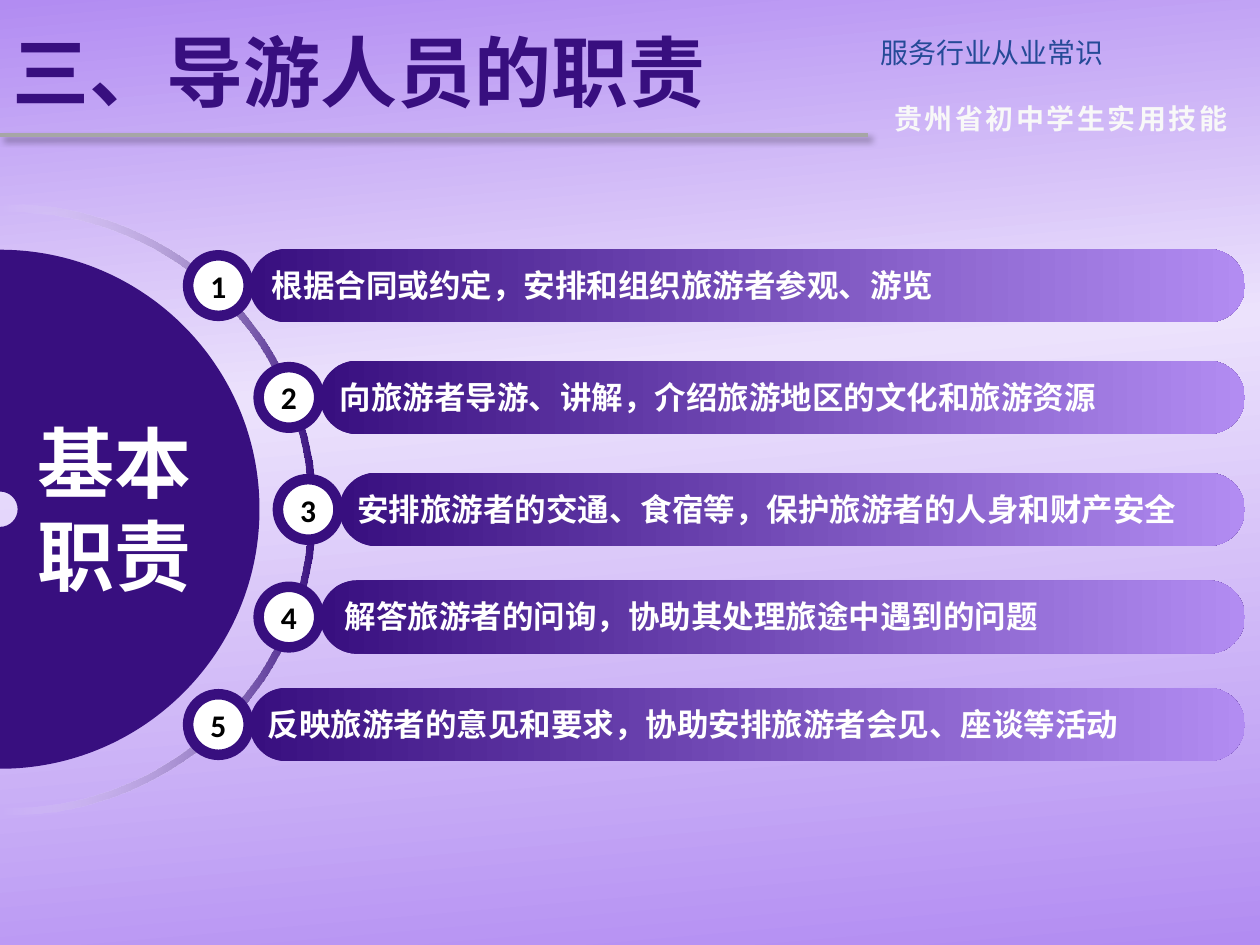
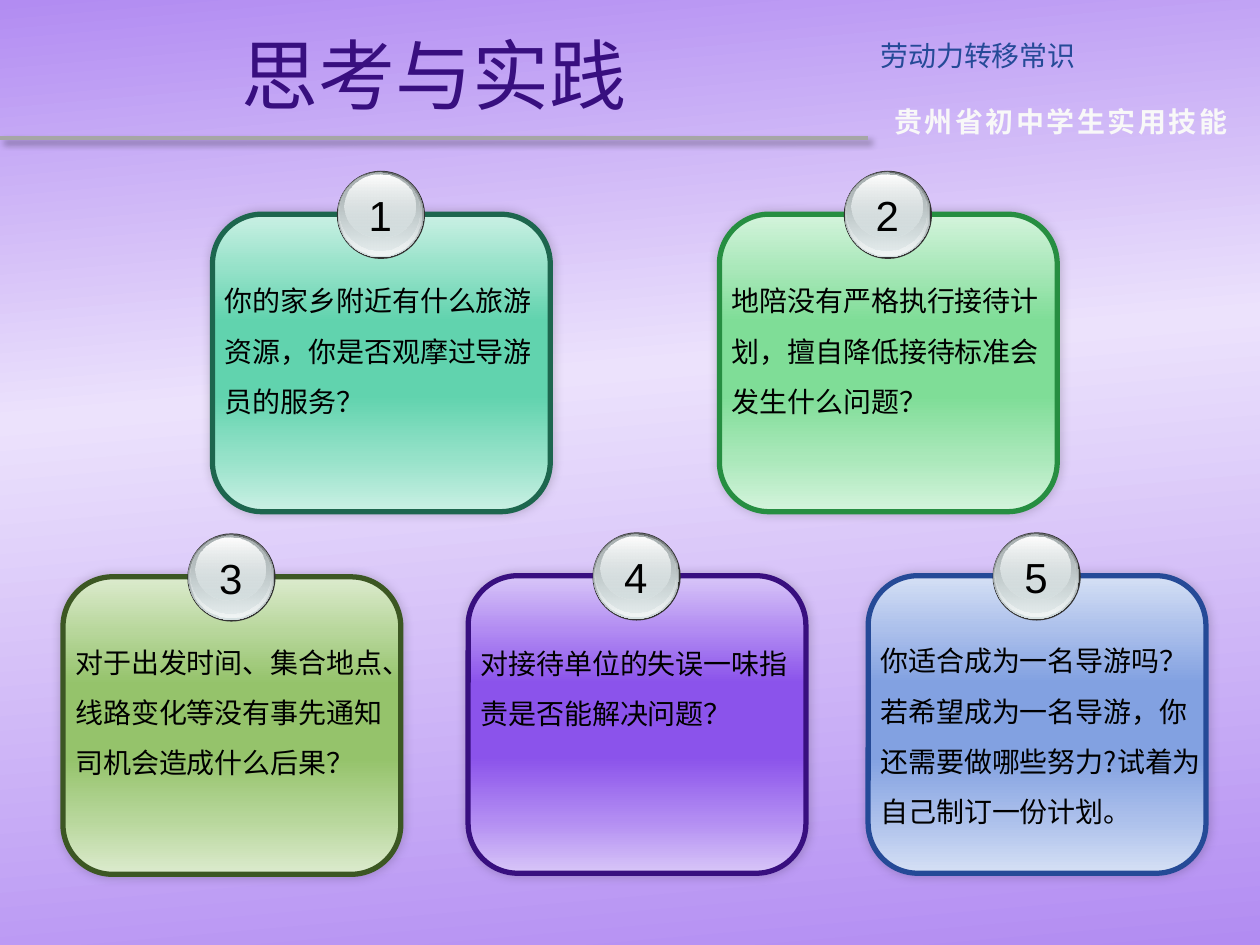
from itertools import pairwise
from math import cos, radians, sin, tan

from lxml.etree import SubElement
from pptx import Presentation
from pptx.dml.color import RGBColor
from pptx.enum.shapes import MSO_CONNECTOR, MSO_SHAPE
from pptx.enum.text import MSO_ANCHOR, PP_ALIGN
from pptx.oxml.ns import qn
from pptx.util import Pt

SANS = "Noto Sans CJK SC"
PURPLE = "380F7F"
LAVENDER = "B28CF2"
BLUE = "254A97"
WHITE = "FFFFFF"
BLACK = "000000"
SILVER = "D6E1E2"

BAR_RIGHT = 711.4
BAR_HEIGHT = 41.8
BADGE_SIZE = 34.6
CARD_WIDTH = 193
CARD_HEIGHT = 170

DUTIES = [
    (142.6, 142.3, 148.3, "根据合同或约定，安排和组织旅游者参观、游览"),
    (182.9, 206.2, 187.1, "向旅游者导游、讲解，介绍旅游地区的文化和旅游资源"),
    (193.9, 270.2, 197.1, "安排旅游者的交通、食宿等，保护旅游者的人身和财产安全"),
    (182.9, 331.7, 189.8, "解答旅游者的问询，协助其处理旅途中遇到的问题"),
    (142.6, 393.1, 145.8, "反映旅游者的意见和要求，协助安排旅游者会见、座谈等活动"),
]

QUESTIONS = [
    (121.4, 122.4, ("CAF0E4", "96E2C9", "61D3AE"), "1D664E", (26.7, 193, 94.3),
     "你的家乡附近有什么旅游资源，你是否观摩过导游员的服务？"),
    (411.1, 122.4, ("D4F4DC", "AAE8BA", "7FDD97"), "268E41", (26.7, 193, 94.3),
     "地陪没有严格执行接待计划，擅自降低接待标准会发生什么问题？"),
    (36, 329.6, ("DCEBCE", "B8D79C", "95C36B"), "3C5723", (25.9, 193, 94.3),
     "对于出发时间、集合地点、线路变化等没有事先通知司机会造成什么后果？"),
    (267.5, 329, ("D8C6F8", LAVENDER, "8B53EB"), PURPLE, (27.4, 198, 65.5),
     "对接待单位的失误一味指责是否能解决问题？"),
    (496.1, 329, ("D5E0F5", "ACC0EB", "82A1E1"), BLUE, (25.7, 201.6, 123.8),
     "你适合成为一名导游吗？若希望成为一名导游，你还需要做哪些努力?试着为自己制订一份计划。"),
]

ORB_LAYERS = [
    (0.5, 0.4, 49, 49, [(0, "636869"), (100, SILVER)]),
    (1.1, 0.7, 47.5, 47.5, [(0, SILVER, 0), (100, "F1F5F5")]),
    (1.8, 1, 45.4, 44.6, [(0, "AAB2B3"), (100, SILVER, 48)]),
    (4.4, 2.4, 40.3, 36, [(0, WHITE), (100, SILVER, 38)]),
]


def color(value):
    return RGBColor.from_string(value)


def add_color(parent, value, alpha=100):
    node = SubElement(parent, qn("a:srgbClr"), val=value)
    if alpha < 100:
        SubElement(node, qn("a:alpha"), val=str(alpha * 1000))


def fill_gradient(fill, element, stops, angle):
    fill.gradient()
    fill.gradient_angle = (360 - angle) % 360
    stop_list = element.find(".//" + qn("a:gsLst"))
    for stop in list(stop_list):
        stop_list.remove(stop)
    for position, *tint in stops:
        add_color(SubElement(stop_list, qn("a:gs"), pos=str(position * 1000)), *tint)


def add_shadow(effects, alpha, blur, distance, angle):
    shadow = SubElement(effects, qn("a:outerShdw"), blurRad=str(Pt(blur)),
                        dist=str(Pt(distance)), dir=str(angle * 60000),
                        algn="ctr", rotWithShape="0")
    add_color(shadow, BLACK, alpha)


def paint(shape, fill, angle=0, line=None, line_width=0):
    shape.shadow.inherit = False
    if isinstance(fill, str):
        shape.fill.solid()
        shape.fill.fore_color.rgb = color(fill)
    else:
        fill_gradient(shape.fill, shape._element, fill, angle)
    if line:
        shape.line.color.rgb = color(line)
        shape.line.width = Pt(line_width)
    else:
        shape.line.fill.background()


def add_preset(shapes, kind, left, top, width, height, fill, **style):
    shape = shapes.add_shape(kind, Pt(left), Pt(top), Pt(width), Pt(height))
    paint(shape, fill, **style)
    return shape


def write(box, lines, size, ink, font=SANS, bold=False, align=PP_ALIGN.LEFT,
          anchor=MSO_ANCHOR.TOP, wrap=True, line_spacing=None, tracking=None):
    frame = box.text_frame
    frame.word_wrap = wrap
    frame.vertical_anchor = anchor
    for index, line in enumerate(lines):
        para = frame.add_paragraph() if index else frame.paragraphs[0]
        para.alignment = align
        para._p.get_or_add_pPr().set("hangingPunct", "1")
        if line_spacing:
            para.line_spacing = line_spacing
        span = para.add_run()
        span.text = line
        span.font.size = Pt(size)
        span.font.bold = bold
        span.font.color.rgb = color(ink)
        span.font.name = font
        properties = span._r.get_or_add_rPr()
        east_asian = font if font.startswith("Noto") else SANS
        SubElement(properties, qn("a:ea"), typeface=east_asian)
        if tracking:
            properties.set("spc", str(int(tracking * 100)))


def add_text(shapes, left, top, width, height, lines, size, ink, **style):
    box = shapes.add_textbox(Pt(left), Pt(top), Pt(width), Pt(height))
    write(box, lines, size, ink, **style)


def add_page(deck, title, topic, offset=0, **title_style):
    page = deck.slides.add_slide(deck.slide_layouts[5])
    rule_top = Pt(77 + offset)
    rule = page.shapes.add_connector(MSO_CONNECTOR.STRAIGHT, 0, rule_top, Pt(496), rule_top)
    rule.line.color.rgb = color("A6A6A6")
    rule.line.width = Pt(2.25)
    effects = SubElement(rule._element.spPr, qn("a:effectLst"))
    add_shadow(effects, 40, 4, 3, 45)
    add_text(page.shapes, 501.6, 54.5 + offset, 209.5, 26.6, ["贵州省初中学生实用技能"],
             16, "F8F8F8", bold=True, align=PP_ALIGN.CENTER, tracking=1.5)
    add_text(page.shapes, 496, 16.5 + offset, 224, 26.6, [topic], 16, BLUE,
             align=PP_ALIGN.JUSTIFY)
    heading = page.shapes.title
    heading.left, heading.top = Pt(0), Pt(3.5 + offset)
    heading.width, heading.height = Pt(496), Pt(73.4)
    write(heading, [title], 44, PURPLE, anchor=MSO_ANCHOR.MIDDLE, **title_style)
    return page


def arc(center_x, center_y, radius, angles):
    def at(angle, pull=0):
        turn = radians(angle)
        return (Pt(center_x + radius * (cos(turn) - pull * sin(turn))),
                Pt(center_y + radius * (sin(turn) + pull * cos(turn))))

    points = [at(angles[0])]
    for start, end in pairwise(angles):
        pull = 4 / 3 * tan(radians(end - start) / 4)
        points += [at(start, pull), at(end, -pull), at(end)]
    return points


def bend(path, segments):
    for first, second, third in zip(segments[::3], segments[1::3], segments[2::3]):
        curve = path.makeelement(qn("a:cubicBezTo"))
        first.addprevious(curve)
        for segment in (first, second, third):
            curve.append(segment[0])
            path.remove(segment)


def add_half_ring(shapes, center_x, center_y, outer, inner, reach, fill):
    angles = [-reach, -90, 0, 90, reach]
    inner_arc = arc(center_x, center_y, inner, angles)
    outer_arc = arc(center_x, center_y, outer, angles[::-1])
    builder = shapes.build_freeform(*inner_arc[0])
    builder.add_line_segments(inner_arc[1:] + outer_arc, close=True)
    shape = builder.convert_to_shape()
    path = shape._element.find(".//" + qn("a:path"))
    segments = path.findall(qn("a:lnTo"))
    split = len(inner_arc) - 1
    bend(path, segments[:split])
    bend(path, segments[split + 1:split + len(outer_arc)])
    paint(shape, fill)


def add_duty(page, number, left, top, text_left, duty):
    shapes = page.shapes.add_group_shape().shapes
    bar = add_preset(shapes, MSO_SHAPE.ROUNDED_RECTANGLE, left, top,
                     BAR_RIGHT - left, BAR_HEIGHT, [(0, PURPLE), (100, LAVENDER)])
    bar.adjustments[0] = 0.5
    badge = add_preset(shapes, MSO_SHAPE.OVAL, left - 35.1, top + 3.6, BADGE_SIZE, BADGE_SIZE,
                       WHITE, line=PURPLE, line_width=6)
    write(badge, [str(number)], 18, BLACK, font="Calibri", bold=True,
          align=PP_ALIGN.CENTER, anchor=MSO_ANCHOR.MIDDLE, wrap=False)
    add_text(shapes, text_left, top + 6.1, BAR_RIGHT - text_left, 29, [duty], 18, WHITE,
             font="Arial", bold=True)


def add_orb(shapes, left, top, number):
    add_preset(shapes, MSO_SHAPE.OVAL, left, top, 50.4, 50.4, "333333")
    for shift_x, shift_y, width, height, stops in ORB_LAYERS:
        add_preset(shapes, MSO_SHAPE.OVAL, left + shift_x, top + shift_y, width, height,
                   stops, angle=90)
    add_text(shapes, left + 10.8, top + 7.2, 28, 36, [str(number)], 24, BLACK,
             font="Arial", align=PP_ALIGN.CENTER, wrap=False)


def add_question(page, number, left, top, tints, border, text_area, question):
    shapes = page.shapes.add_group_shape().shapes
    pale, middle, deep = tints
    stops = list(zip((0, 18, 36, 61, 82, 100), (pale, middle, deep, deep, middle, pale)))
    card = add_preset(shapes, MSO_SHAPE.ROUNDED_RECTANGLE, left, top, CARD_WIDTH, CARD_HEIGHT,
                      stops, angle=90, line=border, line_width=3)
    add_shadow(card._element.spPr.find(qn("a:effectLst")), 20, 6, 0, 315)
    add_orb(shapes, left + 71.1, top - 24.8, number)
    drop, width, height = text_area
    add_text(shapes, left, top + drop, width, height, [question], 16, BLACK, line_spacing=1.5)


def build_duties(deck):
    page = add_page(deck, "三、导游人员的职责", "服务行业从业常识", bold=True)
    add_half_ring(page.shapes, 5.8, 291.4, 174.3, 170, 92, [(0, WHITE, 0), (100, PURPLE)])
    add_half_ring(page.shapes, 0, 291, 148.3, 10.1, 90.5, PURPLE)
    add_text(page.shapes, 11.5, 234, 108, 113.8, ["基本", "职责"], 44, WHITE,
             font="Noto Sans CJK JP", bold=True, align=PP_ALIGN.CENTER)
    for number, duty in enumerate(DUTIES, 1):
        add_duty(page, number, *duty)


def build_questions(deck):
    page = add_page(deck, "思考与实践", "劳动力转移常识", offset=1.8, align=PP_ALIGN.CENTER)
    for number, question in enumerate(QUESTIONS, 1):
        add_question(page, number, *question)


def main():
    deck = Presentation()
    deck.slide_width, deck.slide_height = Pt(720), Pt(540)
    master = deck.slide_master
    fill_gradient(master.background.fill, master._element,
                  [(0, LAVENDER), (40, "ECE2FC"), (100, LAVENDER)], 85)
    build_duties(deck)
    build_questions(deck)
    deck.save("out.pptx")


if __name__ == "__main__":
    main()
